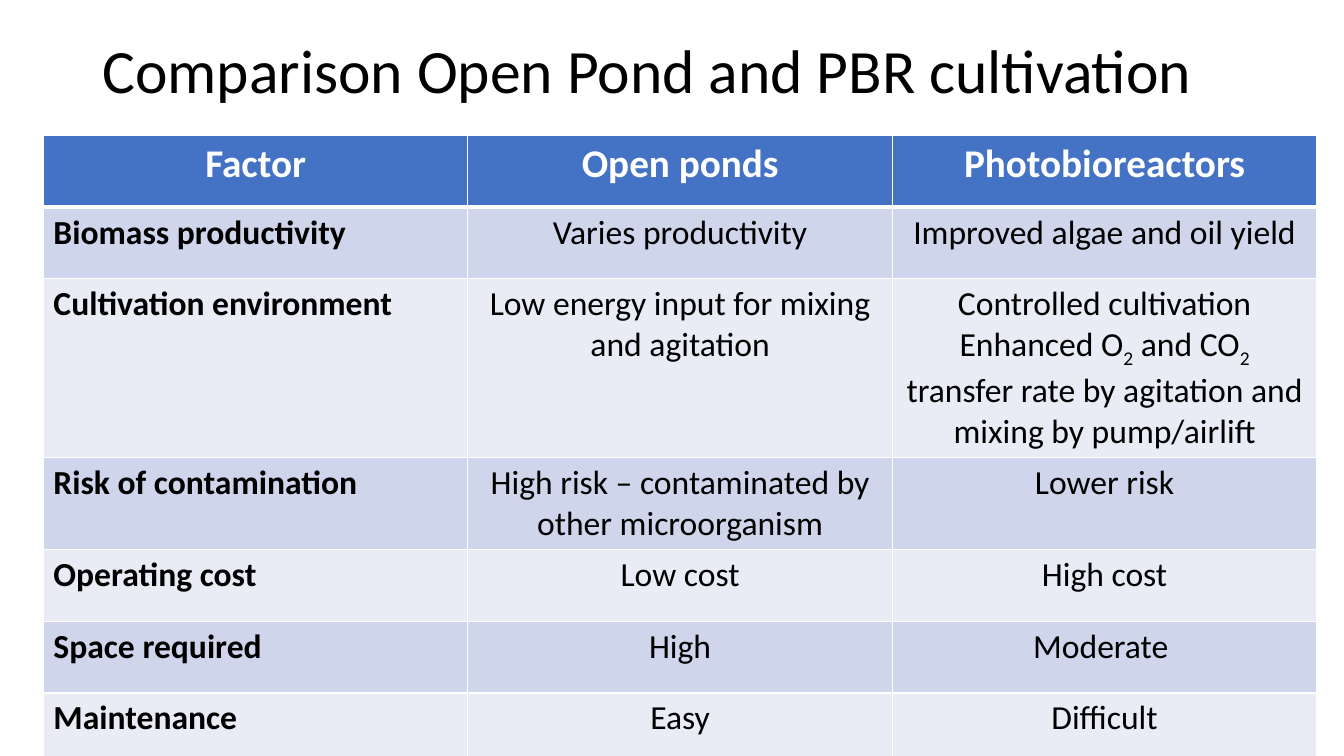
from dataclasses import dataclass

from lxml.etree import SubElement
from pptx import Presentation
from pptx.dml.color import RGBColor
from pptx.enum.text import MSO_ANCHOR, PP_ALIGN
from pptx.oxml.ns import qn
from pptx.util import Pt

TITLE = "Comparison Open Pond and PBR cultivation"
# A digit between underscores is a subscript; a line break starts a paragraph.
ROWS = [
    ("Factor", "Open ponds", "Photobioreactors"),
    ("Biomass productivity", "Varies productivity", "Improved algae and oil yield"),
    ("Cultivation environment", "Low energy input for mixing and agitation",
     "Controlled cultivation\nEnhanced O_2_ and CO_2_ transfer rate by agitation "
     "and mixing by pump/airlift"),
    ("Risk of contamination", "High risk – contaminated by other microorganism",
     "Lower risk"),
    ("Operating cost", "Low cost", "High cost"),
    ("Space required", "High", "Moderate "),
    ("Maintenance", "Easy", "Difficult"),
]


@dataclass(frozen=True)
class Theme:
    font: str = "Calibri"
    title_size: int = 44
    header_size: int = 28
    body_size: int = 24
    text: str = "000000"
    header_text: str = "FFFFFF"
    header_fill: str = "4472C4"
    bands: tuple = ("CFD5EA", "E9EBF5")
    border: str = "FFFFFF"


THEME = Theme()
SLIDE_SIZE = (960, 540)
TITLE_BOX = (66, 0, 828, 104.4)
TABLE_LEFT, TABLE_TOP, TABLE_WIDTH = 31, 96.8, 909.6
ROW_HEIGHT = 51.2
BORDER_WIDTH, HEADER_RULE_WIDTH = 1, 3


def write_text(frame, text, *, size, color, bold=False, align=PP_ALIGN.LEFT, spacing=None):
    for index, line in enumerate(text.split("\n")):
        paragraph = frame.add_paragraph() if index else frame.paragraphs[0]
        paragraph.alignment = align
        paragraph.line_spacing = spacing
        for position, part in enumerate(line.split("_")):
            if not part:
                continue
            run = paragraph.add_run()
            run.text = part
            run.font.name = THEME.font
            run.font.size = Pt(size)
            run.font.bold = bold
            run.font.color.rgb = RGBColor.from_string(color)
            if position % 2:
                run.font._element.set("baseline", "-25000")


def set_borders(cell, **widths):
    """Draw the cell's sides; widths are points, keyed L, R, T and B in schema order."""
    properties = cell._tc.get_or_add_tcPr()
    for side, width in widths.items():
        line = SubElement(properties, qn(f"a:ln{side}"), w=str(Pt(width)))
        fill = SubElement(line, qn("a:solidFill"))
        SubElement(fill, qn("a:srgbClr"), val=THEME.border)


def add_title(slide):
    title = slide.shapes.title
    title.left, title.top, title.width, title.height = map(Pt, TITLE_BOX)
    title.text_frame.vertical_anchor = MSO_ANCHOR.MIDDLE
    write_text(title.text_frame, TITLE, size=THEME.title_size, color=THEME.text, spacing=0.9)


def add_comparison_table(slide):
    column_count = len(ROWS[0])
    table = slide.shapes.add_table(
        len(ROWS), column_count, Pt(TABLE_LEFT), Pt(TABLE_TOP),
        Pt(TABLE_WIDTH), Pt(ROW_HEIGHT * len(ROWS))).table
    for column in table.columns:
        column.width = Pt(TABLE_WIDTH / column_count)
    for row_index, texts in enumerate(ROWS):
        table.rows[row_index].height = Pt(ROW_HEIGHT)
        is_header = row_index == 0
        fill = THEME.header_fill if is_header else THEME.bands[(row_index - 1) % 2]
        for column_index, text in enumerate(texts):
            cell = table.cell(row_index, column_index)
            is_factor = column_index == 0
            set_borders(cell, L=BORDER_WIDTH, R=BORDER_WIDTH,
                        T=HEADER_RULE_WIDTH if row_index == 1 else BORDER_WIDTH,
                        B=HEADER_RULE_WIDTH if is_header else BORDER_WIDTH)
            cell.fill.solid()
            cell.fill.fore_color.rgb = RGBColor.from_string(fill)
            write_text(
                cell.text_frame, text,
                size=THEME.header_size if is_header else THEME.body_size,
                color=THEME.header_text if is_header else THEME.text,
                bold=is_header or is_factor,
                align=PP_ALIGN.LEFT if is_factor and not is_header else PP_ALIGN.CENTER)


def main():
    presentation = Presentation()
    presentation.slide_width, presentation.slide_height = map(Pt, SLIDE_SIZE)
    slide = presentation.slides.add_slide(presentation.slide_layouts.get_by_name("Title Only"))
    add_title(slide)
    add_comparison_table(slide)
    presentation.save("out.pptx")


if __name__ == "__main__":
    main()
